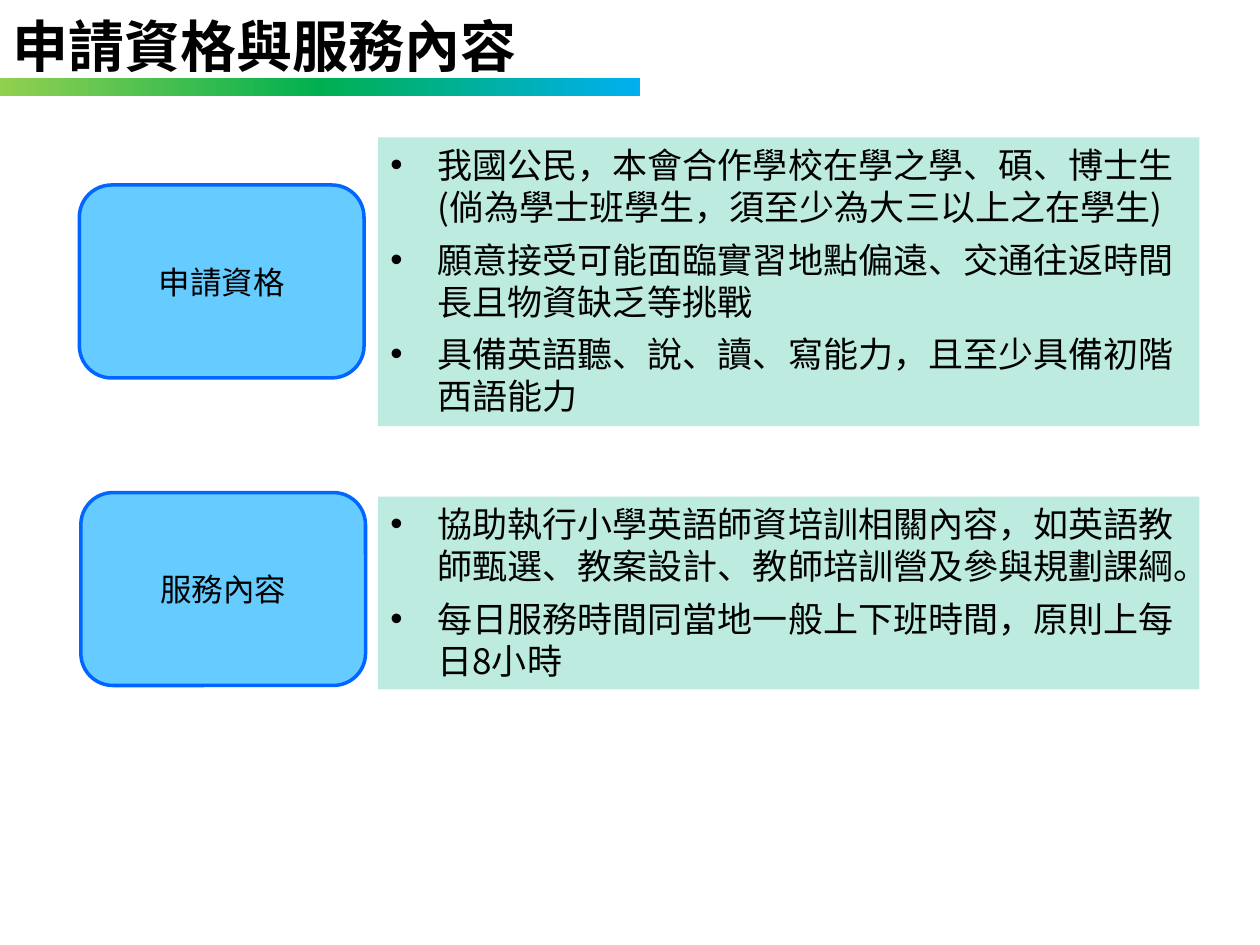
from copy import deepcopy
from dataclasses import dataclass

from lxml import etree
from pptx import Presentation
from pptx.dml.color import RGBColor
from pptx.enum.shapes import MSO_SHAPE
from pptx.enum.text import MSO_ANCHOR, PP_ALIGN
from pptx.oxml.ns import qn
from pptx.util import Cm, Pt

RECTANGLE = MSO_SHAPE.RECTANGLE
ROUNDED = MSO_SHAPE.ROUNDED_RECTANGLE
TOP, MIDDLE = MSO_ANCHOR.TOP, MSO_ANCHOR.MIDDLE
LEFT, CENTER = PP_ALIGN.LEFT, PP_ALIGN.CENTER
TITLE_ONLY = 5


@dataclass(frozen=True)
class Theme:
    """Colours, fonts and type sizes of the slide."""
    text: str = "000000"
    panel: str = "BEEBDF"
    label: str = "66CCFF"
    label_line: str = "0066FF"
    bar: tuple = ("92D050", "00B050", "00B0F0")
    font: str = "Noto Sans CJK SC"
    label_font: str = "Cambria"
    title_size: int = 32
    body_size: int = 20
    label_size: int = 18


THEME = Theme()

SECTIONS = [
    {
        "label": "申請資格",
        "label_place": (1.6, 3.73, 5.74, 3.89),
        "panel_place": (7.62, 2.77, 16.56, 5.82),
        "points": [
            "我國公民，本會合作學校在學之學、碩、博士生(倘為學士班學生，須至少為大三以上之在學生)",
            "願意接受可能面臨實習地點偏遠、交通往返時間長且物資缺乏等挑戰",
            "具備英語聽、說、讀、寫能力，且至少具備初階西語能力",
        ],
    },
    {
        "label": "服務內容",
        "label_place": (1.63, 9.93, 5.74, 3.89),
        "panel_place": (7.62, 10.01, 16.56, 3.89),
        "points": [
            "協助執行小學英語師資培訓相關內容，如英語教師甄選、教案設計、教師培訓營及參與規劃課綱。",
            "每日服務時間同當地一般上下班時間，原則上每日8小時",
        ],
    },
]


def add_bullet(paragraph):
    """Give a paragraph a round bullet with a hanging indent."""
    properties = paragraph._p.get_or_add_pPr()
    properties.set("marL", str(Cm(0.95)))
    properties.set("indent", str(-Cm(0.95)))
    etree.SubElement(properties, qn("a:buFont"), typeface="Arial")
    etree.SubElement(properties, qn("a:buChar"), char="•")


def write_text(shape, lines, *, size, font=THEME.font, bold=False,
               align=LEFT, anchor=TOP, bullets=False, gap=0):
    """Write lines as formatted paragraphs into a shape."""
    frame = shape.text_frame
    frame.word_wrap = True
    frame.vertical_anchor = anchor
    for index, line in enumerate(lines):
        paragraph = frame.paragraphs[0] if index == 0 else frame.add_paragraph()
        paragraph.alignment = align
        paragraph.space_before = Pt(gap if index else 0)
        if bullets:
            add_bullet(paragraph)
        run = paragraph.add_run()
        run.text = line
        run.font.size = Pt(size)
        run.font.bold = bold
        run.font.color.rgb = RGBColor.from_string(THEME.text)
        run.font.name = font
        etree.SubElement(run._r.rPr, qn("a:ea"), typeface=THEME.font)


def add_box(slide, preset, place, fill=None, line=None):
    """Add a flat preset shape with an optional solid fill and outline."""
    shape = slide.shapes.add_shape(preset, *map(Cm, place))
    shape.shadow.inherit = False
    if fill:
        shape.fill.solid()
        shape.fill.fore_color.rgb = RGBColor.from_string(fill)
    if line:
        shape.line.color.rgb = RGBColor.from_string(line)
        shape.line.width = Pt(2)
    else:
        shape.line.fill.background()
    return shape


def add_title(slide, text):
    """Place and format the title placeholder."""
    title = slide.shapes.title
    title.left, title.top, title.width, title.height = map(Cm, (0, 0.1, 10.9, 1.9))
    write_text(title, [text], size=THEME.title_size, bold=True)


def add_gradient_bar(slide):
    """Add the three-colour bar under the title."""
    bar = add_box(slide, RECTANGLE, (0, 1.57, 12.9, 0.36))
    bar.fill.gradient()
    bar.fill.gradient_angle = 0
    stop_list = bar._element.spPr.find(qn("a:gradFill")).find(qn("a:gsLst"))
    stop_list.append(deepcopy(stop_list[-1]))
    for index, (stop, color) in enumerate(zip(bar.fill.gradient_stops, THEME.bar)):
        stop.position = index / (len(THEME.bar) - 1)
        stop.color.rgb = RGBColor.from_string(color)


def add_section(slide, section):
    """Add a bulleted panel and its rounded label."""
    panel = add_box(slide, RECTANGLE, section["panel_place"], THEME.panel)
    write_text(panel, section["points"], size=THEME.body_size, bullets=True, gap=6)
    label = add_box(slide, ROUNDED, section["label_place"], THEME.label, THEME.label_line)
    write_text(label, [section["label"]], size=THEME.label_size,
               font=THEME.label_font, align=CENTER, anchor=MIDDLE)


def main():
    """Build and save the slide."""
    presentation = Presentation()
    presentation.slide_width, presentation.slide_height = Cm(25.4), Cm(19.05)
    slide = presentation.slides.add_slide(presentation.slide_layouts[TITLE_ONLY])
    add_title(slide, "申請資格與服務內容")
    add_gradient_bar(slide)
    for section in SECTIONS:
        add_section(slide, section)
    presentation.save("out.pptx")


if __name__ == "__main__":
    main()
